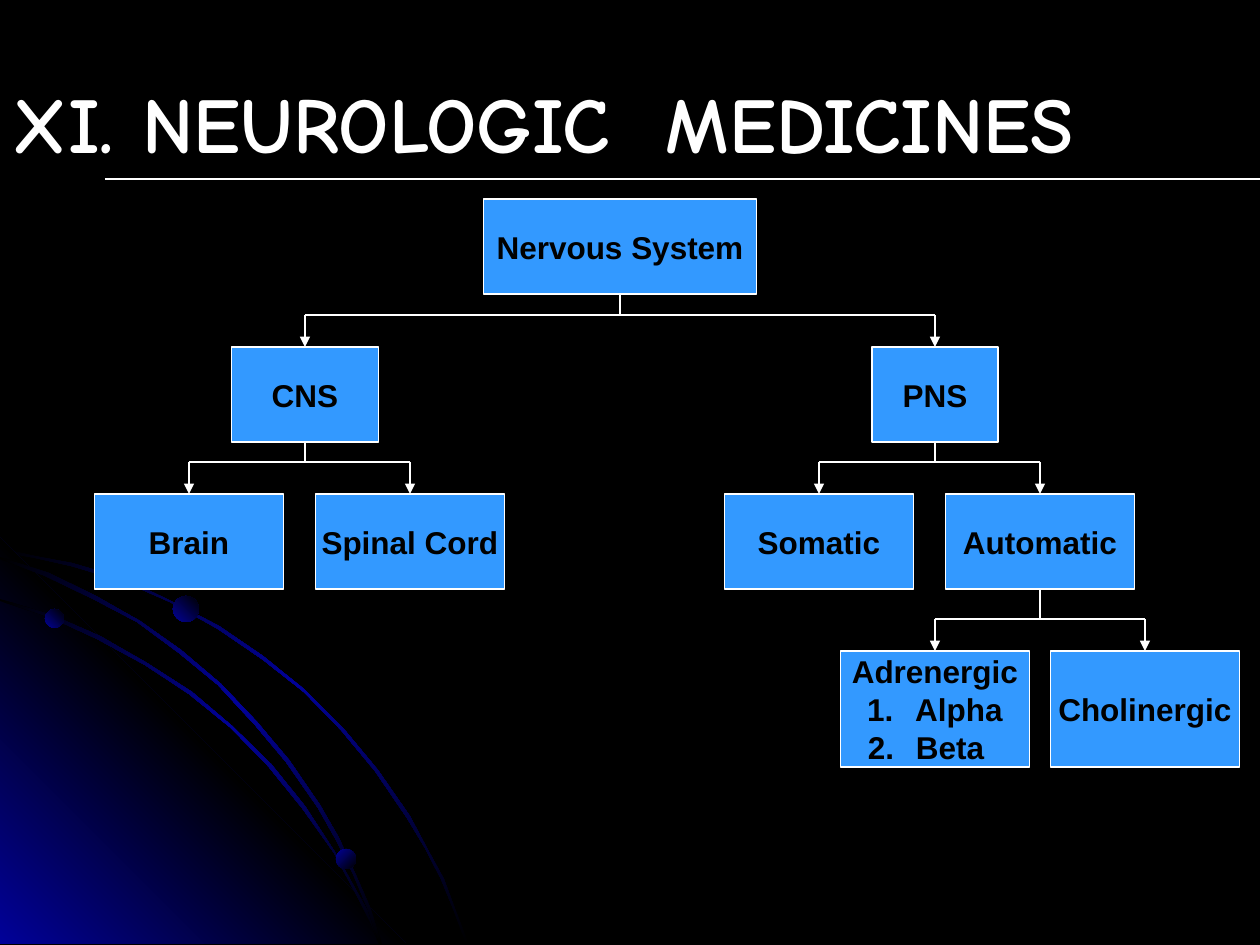
from lxml import etree
from pptx import Presentation
from pptx.dml.color import RGBColor
from pptx.enum.shapes import MSO_CONNECTOR, MSO_SHAPE
from pptx.enum.text import MSO_ANCHOR, MSO_AUTO_SIZE, PP_ALIGN
from pptx.oxml.ns import qn
from pptx.util import Pt

SCALE = 914400 / 126
BLACK = RGBColor(0x00, 0x00, 0x00)
WHITE = RGBColor(0xFF, 0xFF, 0xFF)
NAVY = RGBColor(0x01, 0x01, 0x99)
BLUE = RGBColor(0x33, 0x99, 0xFF)
RECT = MSO_SHAPE.RECTANGLE
OVAL = MSO_SHAPE.OVAL
LINE = MSO_CONNECTOR.STRAIGHT
MIDDLE = MSO_ANCHOR.MIDDLE
CENTER = PP_ALIGN.CENTER
GROW = MSO_AUTO_SIZE.SHAPE_TO_FIT_TEXT
STEM = 32
INDENT = 48

ARCS = [
    ([(0, 548), (35, 556), (72, 563), (123, 578), (171, 601), (219, 626),
      (263, 656), (305, 690), (343, 728), (378, 770), (410, 816), (427, 848),
      (444, 879), (456, 911), (469, 944)],
     [(0, 552), (35, 558), (71, 566), (122, 581), (170, 602), (218, 629),
      (262, 659), (304, 692), (341, 730), (375, 771), (407, 818), (425, 848),
      (441, 879), (454, 911), (466, 944)]),
    ([(0, 599), (52, 615), (100, 636), (147, 663), (192, 692), (232, 726),
      (271, 764), (305, 806), (335, 852), (360, 897), (373, 920), (382, 944)],
     [(0, 601), (49, 617), (97, 639), (145, 665), (189, 694), (231, 728),
      (268, 766), (302, 808), (334, 853), (359, 900), (370, 922), (379, 944)]),
    ([(0, 557), (49, 573), (96, 596), (140, 621), (181, 650), (221, 684),
      (257, 722), (289, 760), (320, 805), (339, 838), (355, 873), (370, 907),
      (382, 944)],
     [(0, 559), (45, 576), (93, 599), (137, 622), (179, 653), (218, 685),
      (255, 725), (286, 762), (318, 808), (336, 840), (353, 874), (368, 910),
      (379, 944)]),
]


def px(*values):
    return [round(value * SCALE) for value in values]


def shade(shape, colors, angle):
    shape.shadow.inherit = False
    shape.line.fill.background()
    shape.fill.gradient()
    shape.fill.gradient_angle = angle
    stops = shape._element.spPr.find(".//" + qn("a:gsLst"))
    stops.clear()
    for i, color in enumerate(colors):
        place = 100000 * i // (len(colors) - 1)
        stop = etree.SubElement(stops, qn("a:gs"), pos=str(place))
        etree.SubElement(stop, qn("a:srgbClr"), val=str(color))


def add_form(slide, points, colors, angle):
    form = slide.shapes.build_freeform(*points[0], scale=SCALE)
    form.add_line_segments(points[1:])
    shade(form.convert_to_shape(), colors, angle)


def add_dot(slide, x, y, size, angle):
    dot = slide.shapes.add_shape(OVAL, *px(x, y, size, size))
    shade(dot, [NAVY, BLACK], angle)


def add_title(slide, text):
    box = slide.shapes.add_textbox(*px(0, 68, 1187, 107))
    frame = box.text_frame
    frame.word_wrap = True
    frame.auto_size = GROW
    frame.vertical_anchor = MIDDLE
    frame.text = text
    set_font(frame.paragraphs[0].font, "Comic Neue", 45, WHITE)


def set_font(font, name, size, color):
    font.name = name
    font.size = Pt(size)
    font.bold = True
    font.color.rgb = color


def add_line(slide, start, end, arrow=False):
    line = slide.shapes.add_connector(LINE, *px(*start, *end))
    line.line.color.rgb = WHITE
    line.line.width = Pt(0.75)
    if arrow:
        stroke = line.line._get_or_add_ln()
        etree.SubElement(stroke, qn("a:tailEnd"), type="triangle")
    etree.SubElement(line._element.spPr, qn("a:effectLst"))


def add_box(slide, text, mid, top, width, height=95):
    box = slide.shapes.add_shape(RECT, *px(mid - width / 2, top, width, height))
    box.shadow.inherit = False
    box.fill.solid()
    box.fill.fore_color.rgb = BLUE
    box.line.color.rgb = WHITE
    box.line.width = Pt(0.75)
    frame = box.text_frame
    frame.word_wrap = False
    frame.vertical_anchor = MIDDLE
    frame.text = text
    for par in frame.paragraphs:
        par.alignment = CENTER
        set_font(par.font, "Arial", 18, BLACK)
    return box


def indent(box, right=0):
    for i, par in enumerate(box.text_frame.paragraphs):
        props = par._p.get_or_add_pPr()
        left = px(INDENT)[0]
        props.set("marL", str(left))
        props.set("indent", str(-left))
        if i:
            number = etree.Element(qn("a:buAutoNum"), type="arabicPeriod")
            props.find(qn("a:defRPr")).addprevious(number)
    if right:
        props.set("marR", str(px(right)[0]))


def add_fork(slide, mid, base, kids, top):
    bus = top - STEM
    add_line(slide, (mid, base), (mid, bus))
    add_line(slide, (kids[0], bus), (kids[-1], bus))
    for kid in kids:
        add_line(slide, (kid, bus), (kid, top), arrow=True)


def add_scene(slide):
    fade = [BLACK, NAVY, BLACK]
    for i, (upper, lower) in enumerate(ARCS):
        add_form(slide, upper + lower[::-1], fade, 315)
        if i == 0:
            corner = [(406, 944), (0, 944), (0, 538)]
            add_form(slide, corner, [NAVY, BLACK, NAVY], 45)
    add_dot(slide, 45, 609, 19, 45)
    add_dot(slide, 336, 849, 20, 315)
    add_dot(slide, 173, 596, 26, 45)


def main():
    deck = Presentation()
    deck.slide_width, deck.slide_height = px(1260, 945)
    slide = deck.slides.add_slide(deck.slide_layouts[6])
    slide.background.fill.solid()
    slide.background.fill.fore_color.rgb = BLACK

    add_scene(slide)
    add_title(slide, "XI. NEUROLOGIC  MEDICINES")
    add_line(slide, (105, 179), (1281, 179))

    add_box(slide, "Nervous System", 620, 199, 273)
    add_box(slide, "CNS", 305, 347, 147)
    add_box(slide, "PNS", 935, 347, 126)
    leaves = [("Brain", 189), ("Spinal Cord", 410),
              ("Somatic", 819), ("Automatic", 1040)]
    for text, mid in leaves:
        add_box(slide, text, mid, 494, 189)
    indent(add_box(slide, "Adrenergic\nAlpha\nBeta", 935, 651, 189, 116), 18)
    indent(add_box(slide, "Cholinergic", 1145, 651, 189, 116))

    add_fork(slide, 620, 294, (305, 935), 347)
    add_fork(slide, 305, 442, (189, 410), 494)
    add_fork(slide, 935, 442, (819, 1040), 494)
    add_fork(slide, 1040, 589, (935, 1145), 651)
    deck.save("out.pptx")


if __name__ == "__main__":
    main()
